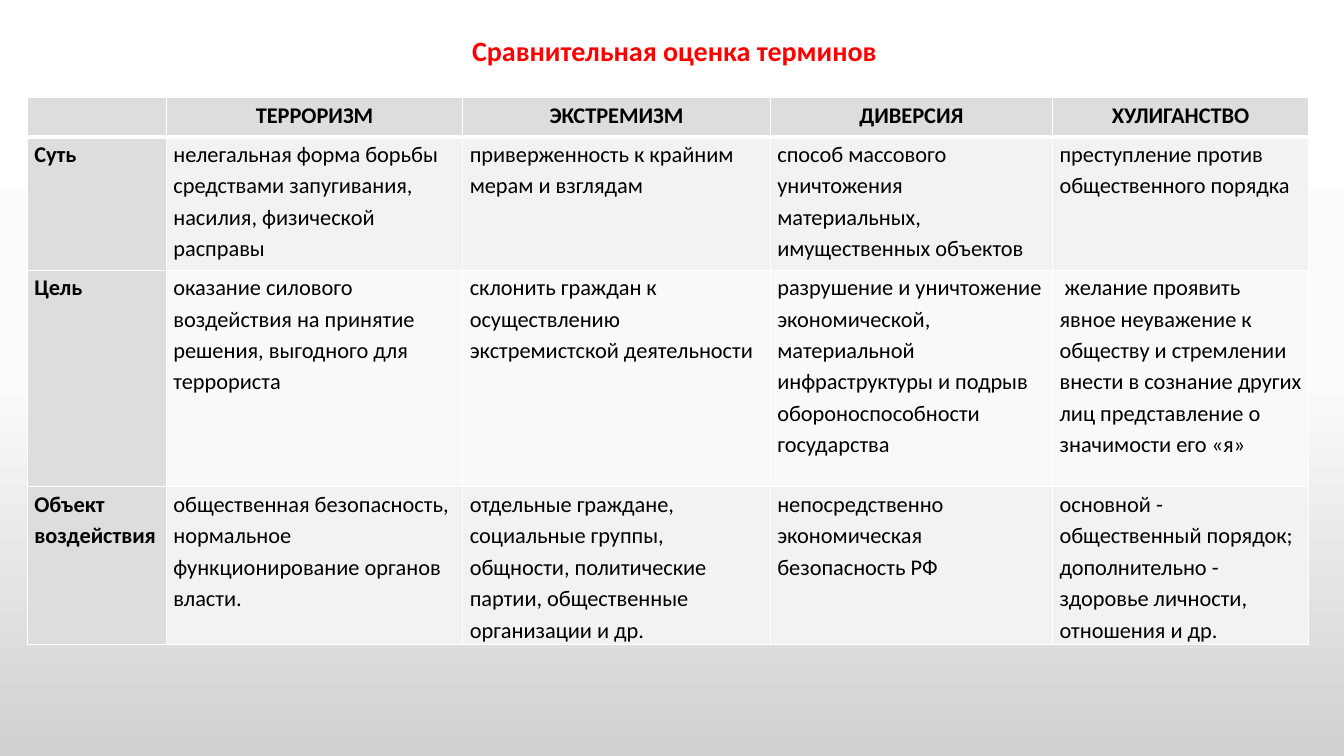
from copy import deepcopy
from dataclasses import dataclass
from typing import Any

from lxml.etree import SubElement
from pptx import Presentation
from pptx.dml.color import RGBColor
from pptx.enum.text import MSO_ANCHOR, MSO_AUTO_SIZE, PP_ALIGN
from pptx.oxml.ns import qn
from pptx.util import Inches, Pt

BACKGROUND_STOPS = [(0, "FFFFFF"), (0.5, "FBFBFB"), (1, "D1D1D1")]
HEADING_FILL = "DDDDDD"
BAND_FILLS = ["F2F2F2", "F9F9F9"]
BORDER_COLOUR = "FFFFFF"
COLUMN_WIDTHS = [1.38, 2.94, 3.05, 2.8, 2.54]
CELL_MARGINS = {
    "margin_left": Inches(0.07),
    "margin_right": Inches(0.07),
    "margin_top": 0,
    "margin_bottom": 0,
}
TITLE_FRAME = {
    "margin_left": Inches(0.1),
    "margin_right": Inches(0.1),
    "margin_top": Inches(0.05),
    "margin_bottom": Inches(0.05),
    "vertical_anchor": MSO_ANCHOR.MIDDLE,
    "auto_size": MSO_AUTO_SIZE.NONE,
    "word_wrap": True,
}


@dataclass
class ComparisonRow:
    height: float
    heading: str
    entries: list[str]


ROWS = [
    ComparisonRow(0.39, "", ["ТЕРРОРИЗМ", "ЭКСТРЕМИЗМ", "ДИВЕРСИЯ", "ХУЛИГАНСТВО"]),
    ComparisonRow(1.32, "Суть", [
        "нелегальная форма борьбы средствами запугивания, насилия, физической расправы",
        "приверженность к крайним мерам и взглядам",
        "способ массового уничтожения материальных, имущественных объектов ",
        "преступление против общественного порядка",
    ]),
    ComparisonRow(2.15, "Цель", [
        "оказание силового воздействия на принятие решения, выгодного для террориста",
        "склонить граждан к осуществлению экстремистской деятельности",
        "разрушение и уничтожение экономической, материальной инфраструктуры и подрыв "
        "обороноспособности государства",
        " желание проявить явное неуважение к обществу и стремлении внести в сознание "
        "других лиц представление о значимости его «я»",
    ]),
    ComparisonRow(1.53, "Объект воздействия", [
        "общественная безопасность, нормальное функционирование органов власти.",
        "отдельные граждане, социальные группы, общности, политические партии, "
        "общественные организации и др.",
        "непосредственно экономическая безопасность РФ",
        "основной - общественный порядок; дополнительно - здоровье личности, "
        "отношения и др.",
    ]),
]


def colour(value: str) -> RGBColor:
    return RGBColor.from_string(value)


def apply_format(target: Any, values: dict[str, Any]) -> None:
    for name, value in values.items():
        setattr(target, name, value)


def write_text(paragraph: Any, text: str, size: int, text_colour: str, bold: bool,
               alignment: PP_ALIGN, line_spacing: float) -> None:
    apply_format(paragraph, {"alignment": alignment, "line_spacing": line_spacing})
    run = paragraph.add_run()
    run.text = text
    apply_format(run.font, {"name": "Calibri", "size": Pt(size), "bold": bold})
    run.font.color.rgb = colour(text_colour)


def paint_background(slide: Any) -> None:
    fill = slide.background.fill
    fill.gradient()
    fill.gradient_angle = 270
    stop_list = slide.background._cSld.find(".//" + qn("a:gsLst"))
    stop_list.insert(1, deepcopy(stop_list[0]))
    for stop, (position, stop_colour) in zip(fill.gradient_stops, BACKGROUND_STOPS):
        stop.position = position
        stop.color.rgb = colour(stop_colour)


def draw_borders(cell: Any, widths: dict[str, int]) -> None:
    properties = cell._tc.get_or_add_tcPr()
    for side, width in widths.items():
        line = SubElement(properties, qn(f"a:ln{side}"), w=str(Pt(width)))
        fill = SubElement(line, qn("a:solidFill"))
        SubElement(fill, qn("a:srgbClr"), val=BORDER_COLOUR)


def add_title(slide: Any) -> None:
    title = slide.shapes.title
    apply_format(title, {"left": Inches(0.94), "top": Inches(0.18),
                         "width": Inches(11.5), "height": Inches(0.68)})
    apply_format(title.text_frame, TITLE_FRAME)
    write_text(title.text_frame.paragraphs[0], "Сравнительная оценка терминов",
               20, "FF0000", True, PP_ALIGN.CENTER, 0.9)


def add_comparison_table(slide: Any) -> None:
    frame = slide.shapes.add_table(
        len(ROWS), len(COLUMN_WIDTHS), Inches(0.27), Inches(0.97),
        Inches(sum(COLUMN_WIDTHS)), Inches(sum(row.height for row in ROWS)))
    table = frame.table
    table.horz_banding = False
    for column, width in zip(table.columns, COLUMN_WIDTHS):
        column.width = Inches(width)
    for row_index, row in enumerate(ROWS):
        table.rows[row_index].height = Inches(row.height)
        for column_index, text in enumerate([row.heading, *row.entries]):
            cell = table.cell(row_index, column_index)
            is_heading = row_index == 0 or column_index == 0
            apply_format(cell, CELL_MARGINS)
            # The rule under the header row is thicker
            draw_borders(cell, {"L": 1, "R": 1,
                                "T": 3 if row_index == 1 else 1,
                                "B": 3 if row_index == 0 else 1})
            cell.fill.solid()
            band_fill = BAND_FILLS[(row_index - 1) % 2]
            cell.fill.fore_color.rgb = colour(HEADING_FILL if is_heading else band_fill)
            if text:
                alignment = PP_ALIGN.CENTER if row_index == 0 else PP_ALIGN.LEFT
                write_text(cell.text_frame.paragraphs[0], text, 16, "000000",
                           is_heading, alignment, 1.15)


def main() -> None:
    presentation = Presentation()
    presentation.slide_width = Inches(13.33)
    presentation.slide_height = Inches(7.5)
    slide = presentation.slides.add_slide(presentation.slide_layouts.get_by_name("Title Only"))
    paint_background(slide)
    add_title(slide)
    add_comparison_table(slide)
    presentation.save("out.pptx")


if __name__ == "__main__":
    main()
